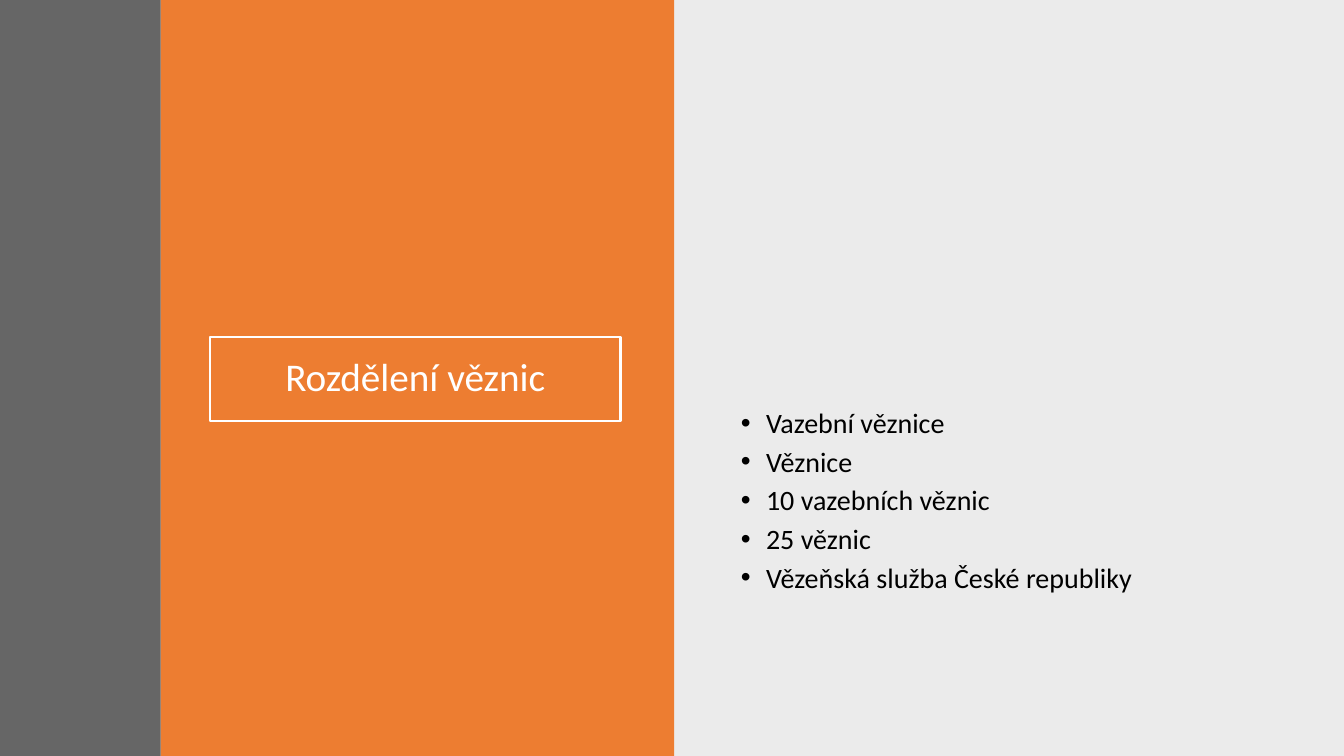
import dataclasses

import lxml.etree
import pptx
import pptx.dml.color
import pptx.enum.shapes
import pptx.enum.text
import pptx.oxml.ns
import pptx.util

PX = 9525  # EMU in one px, 96 px to the inch
SLIDE_W, SLIDE_H = 1280, 720
STRIPE_W = 153
ORANGE_W = 489


@dataclasses.dataclass(frozen=True)
class Theme:
    font: str = "Calibri"
    title_size: int = 28
    body_size: int = 20
    white: str = "FFFFFF"
    black: str = "000000"
    orange: str = "ED7D31"
    grey: str = "404040"


THEME = Theme()


def px(n):
    return pptx.util.Emu(n * PX)


def rgb(color):
    return pptx.dml.color.RGBColor.from_string(color)


def place(sp, left, top, width, height):
    sp.left, sp.top, sp.width, sp.height = map(px, (left, top, width, height))


def add_panel(slide, left, width, color, opacity=100):
    """Add a full-height colour band; opacity is in percent."""
    sp = slide.shapes.add_shape(
        pptx.enum.shapes.MSO_SHAPE.RECTANGLE, px(left), 0, px(width), px(SLIDE_H))
    sp.shadow.inherit = False
    sp.line.fill.background()
    sp.fill.solid()
    sp.fill.fore_color.rgb = rgb(color)
    if opacity < 100:
        qn = pptx.oxml.ns.qn
        clr = sp.fill._xPr.find(qn("a:solidFill")).find(qn("a:srgbClr"))
        lxml.etree.SubElement(clr, qn("a:alpha")).set("val", str(opacity * 1000))


def write_text(p, text, *, size, color, align=None, after=0, margin=0, hanging=0):
    p.alignment = align
    p.line_spacing = 0.9
    p.space_before = pptx.util.Pt(0)
    p.space_after = pptx.util.Pt(after)
    pPr = p._p.get_or_add_pPr()
    pPr.set("marL", str(px(margin)))
    pPr.set("indent", str(px(-hanging)))
    r = p.add_run()
    r.text = text
    r.font.name = THEME.font
    r.font.size = pptx.util.Pt(size)
    r.font.color.rgb = rgb(color)


def prepare_frame(sp, anchor):
    tf = sp.text_frame
    tf.word_wrap = True
    tf.auto_size = pptx.enum.text.MSO_AUTO_SIZE.NONE
    tf.vertical_anchor = anchor
    return tf


def fill_title(sp, text):
    place(sp, 200, 321, 391, 80)
    sp.line.color.rgb = rgb(THEME.white)
    sp.line.width = pptx.util.Pt(2)
    tf = prepare_frame(sp, pptx.enum.text.MSO_ANCHOR.MIDDLE)
    write_text(tf.paragraphs[0], text, size=THEME.title_size, color=THEME.white,
               align=pptx.enum.text.PP_ALIGN.CENTER)


def fill_list(sp, items):
    place(sp, 690, 385, 531, 268)
    tf = prepare_frame(sp, pptx.enum.text.MSO_ANCHOR.TOP)
    for i, item in enumerate(items):
        p = tf.add_paragraph() if i else tf.paragraphs[0]
        write_text(p, item, size=THEME.body_size, color=THEME.black,
                   after=6, margin=30, hanging=24)


def main():
    prs = pptx.Presentation()
    prs.slide_width, prs.slide_height = px(SLIDE_W), px(SLIDE_H)
    slide = prs.slides.add_slide(prs.slide_layouts[1])
    title, body = slide.placeholders

    add_panel(slide, SLIDE_W // 2, SLIDE_W // 2, THEME.black, opacity=8)
    add_panel(slide, STRIPE_W, ORANGE_W, THEME.orange)
    add_panel(slide, 0, STRIPE_W, THEME.grey, opacity=80)

    fill_title(title, "Rozdělení věznic")
    fill_list(body, [
        "Vazební věznice",
        "Věznice",
        "10 vazebních věznic",
        "25 věznic",
        "Vězeňská služba České republiky",
    ])
    for sp in (title, body):  # bring the text in front of the panels
        slide.shapes._spTree.append(sp._element)

    prs.save("out.pptx")


if __name__ == "__main__":
    main()
